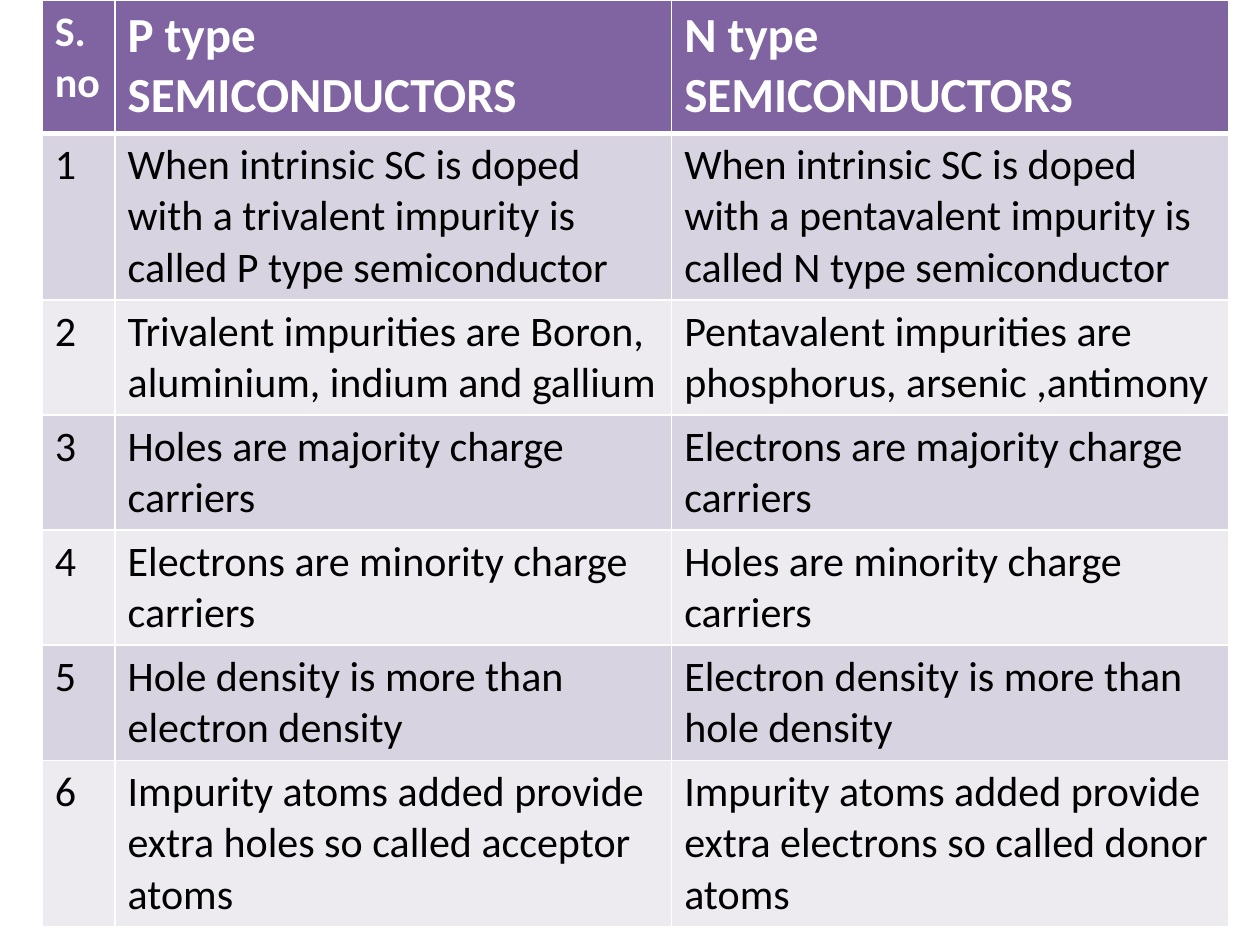
from lxml.etree import SubElement as Sub
from pptx import Presentation as Deck
from pptx.dml.color import RGBColor as Color
from pptx.oxml.ns import qn
from pptx.util import Cm, Pt

WHITE = Color(0xFF, 0xFF, 0xFF)
BLACK = Color(0, 0, 0)
PURPLE = Color(0x80, 0x64, 0xA2)
BANDS = (Color(0xED, 0xEA, 0xF0), Color(0xD8, 0xD3, 0xE0))

WIDTHS = (1.47, 11.22, 11.22)
HEIGHTS = (2.69, 3.23, 2.26, 2.31, 2.11, 2.16, 2.16)
HEADS = ("S.no", "P type SEMICONDUCTORS", "N type SEMICONDUCTORS")
PAIRS = (
    ("When intrinsic SC is doped with a trivalent impurity is called P type semiconductor",
     "When intrinsic SC is doped with a pentavalent impurity is called N type semiconductor"),
    ("Trivalent impurities are Boron, aluminium, indium and gallium",
     "Pentavalent impurities are phosphorus, arsenic ,antimony"),
    ("Holes are majority charge carriers",
     "Electrons are majority charge carriers"),
    ("Electrons are minority charge carriers",
     "Holes are minority charge carriers"),
    ("Hole density is more than electron density",
     "Electron density is more than hole density"),
    ("Impurity atoms added provide extra holes so called acceptor atoms",
     "Impurity atoms added provide extra electrons so called donor atoms"),
)


def add_edge(cell, side, width):
    line = Sub(cell._tc.get_or_add_tcPr(), qn("a:ln" + side), w=str(Pt(width)))
    fill = Sub(line, qn("a:solidFill"))
    Sub(fill, qn("a:srgbClr"), val=str(WHITE))


def set_text(cell, text, size, color, bold):
    cell.text_frame.text = text
    for run in cell.text_frame.paragraphs[0].runs:
        font = run.font
        font.name = "Calibri"
        font.size = Pt(size)
        font.bold = bold
        font.color.rgb = color


def fill_cell(cell, row, col, text):
    head = row == 0
    edges = {"L": 1, "R": 1, "T": 3 if row == 1 else 1, "B": 3 if head else 1}
    for side, width in edges.items():
        add_edge(cell, side, width)
    cell.fill.solid()
    cell.fill.fore_color.rgb = PURPLE if head else BANDS[row % 2]
    set_text(cell, text, 28 if head and col else 24, WHITE if head else BLACK, head)
    if head and col:
        cell.margin_right = Cm(0.8)


def add_grid(slide, rows):
    frame = slide.shapes.add_table(
        len(rows), len(WIDTHS), Cm(0.85), Cm(0), Cm(sum(WIDTHS)), Cm(sum(HEIGHTS)))
    table = frame.table
    for column, width in zip(table.columns, WIDTHS):
        column.width = Cm(width)
    for line, height in zip(table.rows, HEIGHTS):
        line.height = Cm(height)
    for row, texts in enumerate(rows):
        for col, text in enumerate(texts):
            fill_cell(table.cell(row, col), row, col, text)


def main():
    deck = Deck()
    deck.slide_width, deck.slide_height = Cm(25.4), Cm(19.05)
    slide = deck.slides.add_slide(deck.slide_layouts[6])
    body = [(str(num), *pair) for num, pair in enumerate(PAIRS, 1)]
    add_grid(slide, [HEADS, *body])
    deck.save("out.pptx")


if __name__ == "__main__":
    main()
